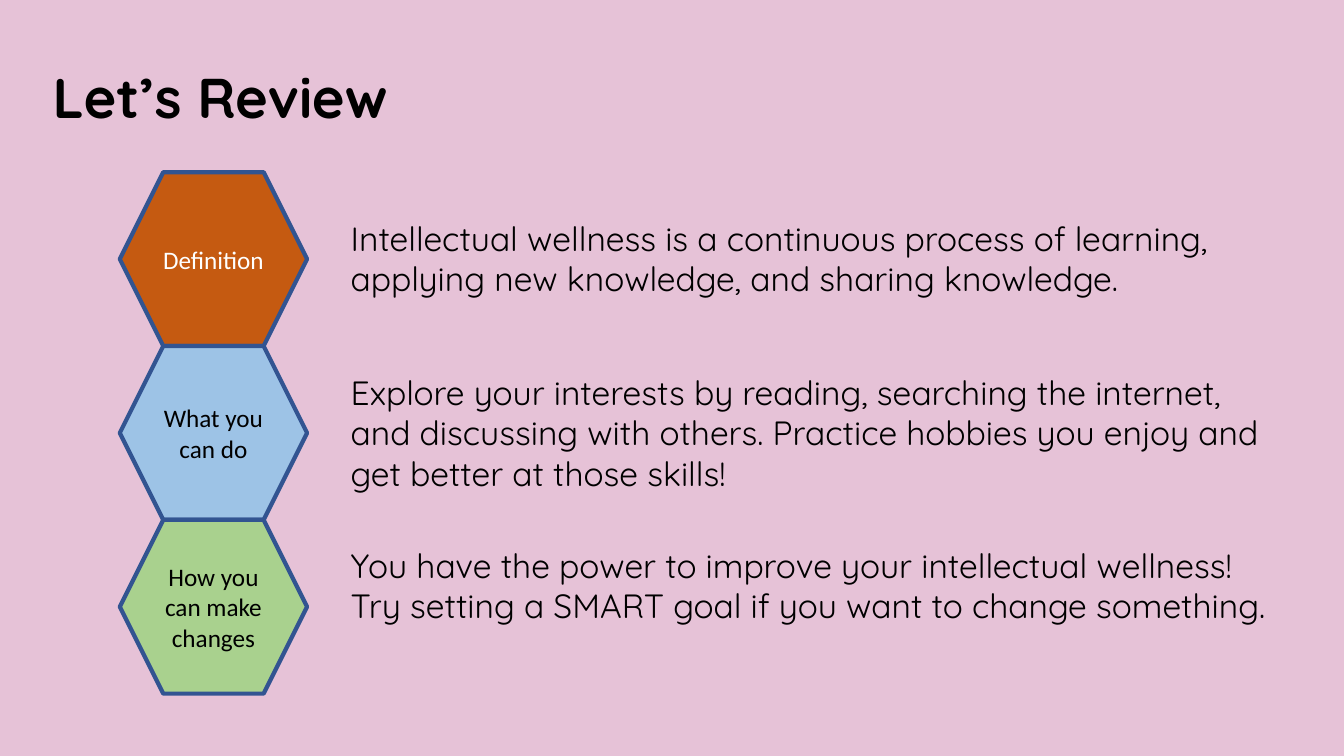
from pptx import Presentation
from pptx.dml.color import RGBColor
from pptx.enum import shapes, text
from pptx.util import Cm, Pt

PINK = RGBColor(0xE6, 0xC2, 0xD7)
ORANGE = RGBColor(0xC5, 0x5A, 0x11)
BLUE = RGBColor(0x9D, 0xC3, 0xE6)
GREEN = RGBColor(0xA9, 0xD1, 0x8E)
NAVY = RGBColor(0x32, 0x54, 0x91)
BLACK = RGBColor(0, 0, 0)
WHITE = RGBColor(0xFF, 0xFF, 0xFF)

HEX_LEFT, HEX_TOP = 3.02, 4.34
HEX_WIDTH, HEX_HEIGHT = 4.72, 4.38

# label, fill, label colour, explanation, its top and height in cm
TOPICS = [
    ("Definition", ORANGE, WHITE,
     "Intellectual wellness is a continuous process of learning, "
     "applying new knowledge, and sharing knowledge.", 5.36, 2.31),
    ("What you can do", BLUE, BLACK,
     "Explore your interests by reading, searching the internet, and discussing "
     "with others. Practice hobbies you enjoy and get better at those skills!",
     9.25, 3.33),
    ("How you can make changes", GREEN, BLACK,
     "You have the power to improve your intellectual wellness! "
     "Try setting a SMART goal if you want to change something.", 13.61, 3.33),
]


def write(holder, words, size=24, font="Quicksand", color=BLACK, bold=False,
          align=text.PP_ALIGN.LEFT, anchor=text.MSO_ANCHOR.TOP):
    frame = holder.text_frame
    frame.word_wrap = True
    frame.auto_size = text.MSO_AUTO_SIZE.NONE
    frame.vertical_anchor = anchor
    line = frame.paragraphs[0]
    line.alignment = align
    run = line.add_run()
    run.text = words
    run.font.size = Pt(size)
    run.font.name = font
    run.font.bold = bold
    run.font.color.rgb = color


def add_heading(slide, words):
    heading = slide.shapes.title
    heading.left, heading.top = Cm(1.07), Cm(1.45)
    heading.width, heading.height = Cm(29.36), Cm(1.96)
    write(heading, words, size=40, bold=True)


def add_hexagon(slide, row, label, fill, color):
    hexagon = slide.shapes.add_shape(
        shapes.MSO_SHAPE.HEXAGON, Cm(HEX_LEFT), Cm(HEX_TOP + row * HEX_HEIGHT),
        Cm(HEX_WIDTH), Cm(HEX_HEIGHT))
    hexagon.shadow.inherit = False
    hexagon.fill.solid()
    hexagon.fill.fore_color.rgb = fill
    hexagon.line.color.rgb = NAVY
    hexagon.line.width = Pt(3)
    write(hexagon, label, size=18, font="Calibri", color=color,
          align=text.PP_ALIGN.CENTER, anchor=text.MSO_ANCHOR.MIDDLE)


def add_explanation(slide, words, top, height):
    explanation = slide.shapes.add_textbox(Cm(8.59), Cm(top), Cm(24.05), Cm(height))
    write(explanation, words)


def main():
    deck = Presentation()
    deck.slide_width, deck.slide_height = Cm(33.87), Cm(19.05)
    title_only = deck.slide_layouts[5]
    review = deck.slides.add_slide(title_only)

    # Background and heading
    review.background.fill.solid()
    review.background.fill.fore_color.rgb = PINK
    add_heading(review, "Let’s Review")

    # Stacked topics with their explanations
    for row, (label, fill, color, words, top, height) in enumerate(TOPICS):
        add_hexagon(review, row, label, fill, color)
        add_explanation(review, words, top, height)

    deck.save("out.pptx")


if __name__ == "__main__":
    main()
